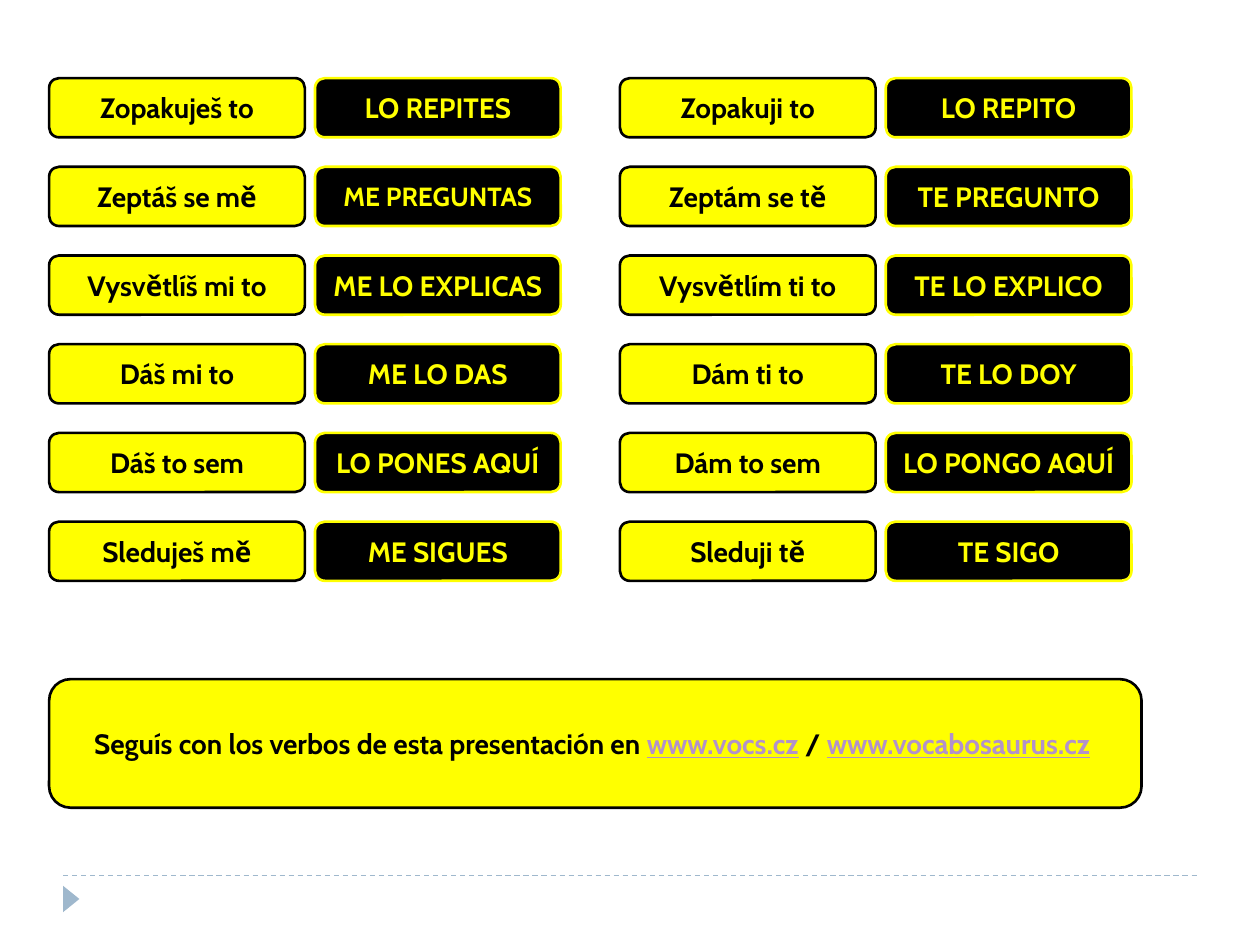
from lxml.etree import SubElement
from pptx import Presentation
from pptx.dml.color import RGBColor
from pptx.enum.dml import MSO_LINE as Dash
from pptx.enum.shapes import MSO_CONNECTOR as Link, MSO_SHAPE as Shape
from pptx.enum.text import MSO_ANCHOR as Anchor, PP_ALIGN as Align
from pptx.oxml.ns import qn
from pptx.util import Inches, Pt

YELLOW = RGBColor(0xFF, 0xFF, 0x00)
BLACK = RGBColor(0x00, 0x00, 0x00)
BLUE = RGBColor(0x9F, 0xB8, 0xCD)
LILAC = RGBColor(0xB2, 0x92, 0xCA)

# Grid of the slide; every length below counts its columns and rows
COLS, ROWS = 100, 75


class Deck:
    font = "Cabin"
    size = 16
    edge = 1.5

    def __init__(self):
        self.prs = Presentation()
        self.prs.slide_width, self.prs.slide_height = Inches(10), Inches(7.5)
        self.slide = self.prs.slides.add_slide(self.prs.slide_layouts[6])

    def x(self, cols):
        return round(self.prs.slide_width * cols / COLS)

    def y(self, rows):
        return round(self.prs.slide_height * rows / ROWS)

    def shape(self, kind, left, top, width, height, fill):
        item = self.slide.shapes.add_shape(
            kind, self.x(left), self.y(top), self.x(width), self.y(height))
        item.shadow.inherit = False
        item.fill.solid()
        item.fill.fore_color.rgb = fill
        item.line.fill.background()
        return item

    def card(self, left, top, width, height, fill, ink, runs, size=None):
        """Rounded box whose border has the colour of its text."""
        box = self.shape(Shape.ROUNDED_RECTANGLE, left, top, width, height, fill)
        box.line.color.rgb = ink
        box.line.width = Pt(self.edge)
        frame = box.text_frame
        frame.word_wrap = True
        frame.vertical_anchor = Anchor.MIDDLE
        par = frame.paragraphs[0]
        par.alignment = Align.CENTER
        for text, link in runs:
            run = par.add_run()
            run.text = text
            font = run.font
            font.name, font.size, font.bold = self.font, Pt(size or self.size), True
            font.underline = link
            font.color.rgb = LILAC if link else ink

    def rule(self, left, right, top):
        line = self.slide.shapes.add_connector(
            Link.STRAIGHT, self.x(left), self.y(top), self.x(right), self.y(top))
        line.line.color.rgb = BLUE
        line.line.width = Pt(0.75)
        line.line.dash_style = Dash.DASH
        SubElement(line._element.spPr, qn("a:effectLst"))

    def arrow(self, left, top, width, height):
        self.shape(Shape.ISOSCELES_TRIANGLE, left, top, width, height, BLUE).rotation = 90


# Czech and Spanish, second person then first person
VERBS = [
    ("Zopakuješ to", "LO REPITES", "Zopakuji to", "LO REPITO"),
    ("Zeptáš se mě", "ME PREGUNTAS", "Zeptám se tě", "TE PREGUNTO"),
    ("Vysvětlíš mi to", "ME LO EXPLICAS", "Vysvětlím ti to", "TE LO EXPLICO"),
    ("Dáš mi to", "ME LO DAS", "Dám ti to", "TE LO DOY"),
    ("Dáš to sem", "LO PONES AQUÍ", "Dám to sem", "LO PONGO AQUÍ"),
    ("Sleduješ mě", "ME SIGUES", "Sleduji tě", "TE SIGO"),
]
SMALL = {"ME PREGUNTAS": 15}
LEFT, TOP, HIGH = 3.9, 6.2, 4.7
PAIR, STEP = 45.3, 7.04
# Offset in the pair, width, fill, ink
STYLES = [(0, 20.3, YELLOW, BLACK), (21.1, 19.5, BLACK, YELLOW)]


def main():
    deck = Deck()

    # Footer marks
    deck.rule(5, 95, 69.5)
    deck.arrow(4.6, 70.7, 2.1, 1.3)

    # Verb cards
    for row, words in enumerate(VERBS):
        for col, word in enumerate(words):
            pair, side = divmod(col, 2)
            shift, width, fill, ink = STYLES[side]
            deck.card(LEFT + pair * PAIR + shift, TOP + row * STEP, width, HIGH,
                      fill, ink, [(word, False)], SMALL.get(word))

    # Closing banner
    deck.card(LEFT, 53.9, 86.7, 10.2, YELLOW, BLACK, [
        ("Seguís con los verbos de esta presentación en ", False),
        ("www.vocs.cz", True),
        (" / ", False),
        ("www.vocabosaurus.cz", True),
        (" ", False),
    ])

    deck.prs.save("out.pptx")


if __name__ == "__main__":
    main()
